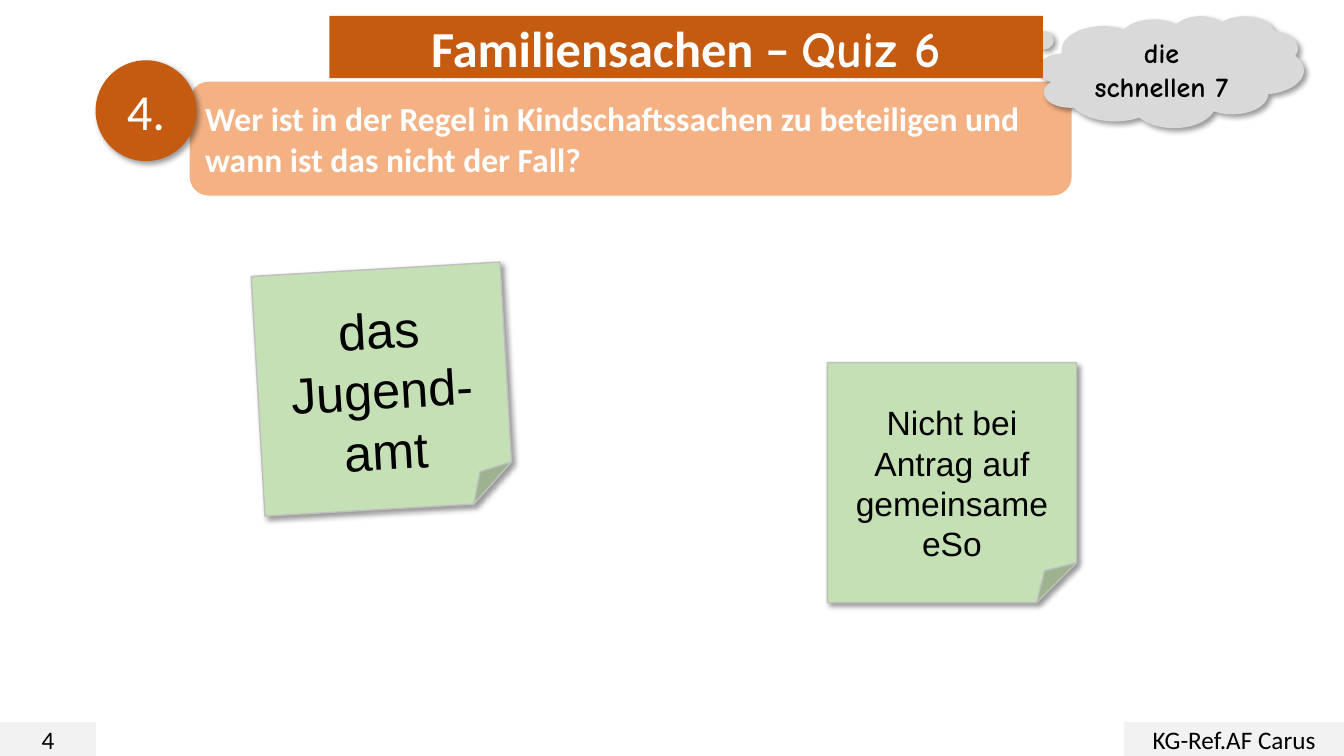
"""Builds the quiz slide on who takes part in child custody proceedings."""
from lxml import etree
from pptx import Presentation
from pptx import util as u
from pptx.dml.color import RGBColor
from pptx.enum import shapes, text
from pptx.oxml import parse_xml

NS = "http://schemas.openxmlformats.org/drawingml/2006/main"
SHADOW = (f'<a:effectLst xmlns:a="{NS}"><a:outerShdw blurRad="50800" dist="38100" '
          'dir="2700000" algn="tl" rotWithShape="0"><a:srgbClr val="000000">'
          '<a:alpha val="40000"/></a:srgbClr></a:outerShdw></a:effectLst>')
ROUNDED = f'<a:prstGeom xmlns:a="{NS}" prst="roundRect"><a:avLst/></a:prstGeom>'
KIND = shapes.MSO_SHAPE
ORANGE, PEACH, GREEN = "C55A11", "F4B183", "C5E0B4"
PALE, GREY, WHITE, BLACK = "F2F2F2", "D9D9D9", "FFFFFF", "000000"


def paint(target, colour):
    target.solid()
    target.fore_color.rgb = RGBColor.from_string(colour)


def write(shape, runs, size, colour, bold=False, align=text.PP_ALIGN.CENTER):
    frame = shape.text_frame
    frame.word_wrap = True
    frame.auto_size = text.MSO_AUTO_SIZE.NONE
    frame.vertical_anchor = text.MSO_ANCHOR.MIDDLE
    paragraph = frame.paragraphs[0]
    paragraph.alignment = align
    for words, font_name in runs:
        run = paragraph.add_run()
        run.text = words
        run.font.name = font_name
        run.font.size = u.Pt(size)
        run.font.bold = bold
        paint(run.font.fill, colour)


deck = Presentation()
deck.slide_width, deck.slide_height = u.Cm(33.87), u.Cm(19.05)
slide = deck.slides.add_slide(deck.slide_layouts[5])

footers = [("4", 0, 2.42), ("KG-Ref.AF Carus", 28.33, 5.54)]
for words, left, width in footers:
    footer = slide.shapes.add_shape(
        KIND.RECTANGLE, u.Cm(left), u.Cm(18.2), u.Cm(width), u.Cm(0.85))
    footer.shadow.inherit = False
    paint(footer.fill, PALE)
    footer.line.fill.background()
    write(footer, [(words, "Calibri")], 18, BLACK)

question_group = slide.shapes.add_group_shape()
question = question_group.shapes.add_shape(
    KIND.ROUNDED_RECTANGLE, u.Cm(4.78), u.Cm(2.06), u.Cm(22.23), u.Cm(2.87))
question.shadow.inherit = False
paint(question.fill, PEACH)
question.line.fill.background()
write(question, [("Wer ist in der Regel in Kindschaftssachen zu beteiligen "
                  "und wann ist das nicht der Fall?", "Calibri")],
      24, WHITE, True, text.PP_ALIGN.LEFT)

number = question_group.shapes.add_shape(
    KIND.OVAL, u.Cm(2.41), u.Cm(1.52), u.Cm(2.54), u.Cm(2.54))
paint(number.fill, ORANGE)
number.line.fill.background()
number._element.spPr.append(parse_xml(SHADOW))
write(number, [("4.", "Calibri")], 36, WHITE)

notes = [("das Jugend-amt", 6.5, 6.78, -3.3, 36),
         ("Nicht bei Antrag auf gemeinsame eSo", 20.85, 9.14, 0, 24)]
for words, left, top, angle, size in notes:
    note = slide.shapes.add_shape(
        KIND.FOLDED_CORNER, u.Cm(left), u.Cm(top), u.Cm(6.28), u.Cm(6.05))
    note.rotation = angle
    paint(note.fill, GREEN)
    paint(note.line.fill, "BFBFBF")
    note.line.width = u.Pt(1)
    note._element.spPr.append(parse_xml(SHADOW))
    note.text_frame.margin_top = u.Cm(1.14)
    write(note, [(words, "Arial")], size, BLACK)

cloud = slide.shapes.add_shape(
    KIND.CLOUD_CALLOUT, u.Cm(26.16), u.Cm(0.4), u.Cm(6.7), u.Cm(2.82))
cloud.adjustments[0], cloud.adjustments[1] = -0.59, -0.35
paint(cloud.fill, GREY)
cloud.line.fill.background()
cloud._element.spPr.append(parse_xml(SHADOW))
write(cloud, [("die schnellen 7", "Comic Neue")], 20, BLACK, True)

title = slide.shapes.title
title.left, title.top, title.width, title.height = (
    u.Cm(8.3), u.Cm(0.4), u.Cm(17.98), u.Cm(1.57))
title._element.spPr.append(etree.fromstring(ROUNDED))
paint(title.fill, ORANGE)
write(title, [("Familiensachen – ", "Calibri"), ("Quiz 6", "Comic Neue")],
      36, WHITE, True)
slide.shapes._spTree.append(title._element)

deck.save("out.pptx")
